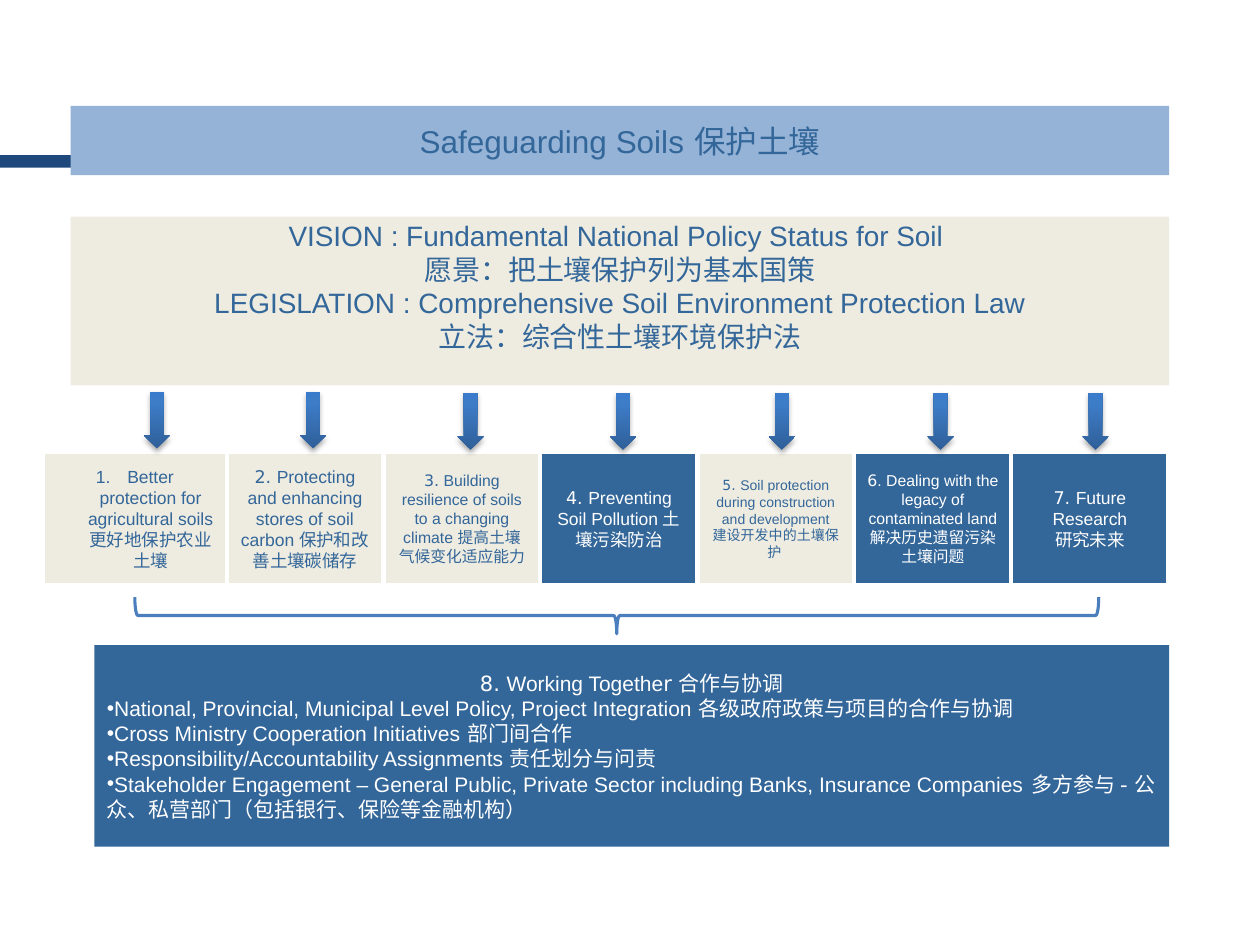
from copy import deepcopy
from dataclasses import dataclass

from lxml import etree
from pptx import Presentation
from pptx.dml.color import RGBColor
from pptx.enum.shapes import MSO_CONNECTOR, MSO_SHAPE
from pptx.enum.text import MSO_ANCHOR, PP_ALIGN
from pptx.oxml.ns import qn
from pptx.util import Inches, Pt

RECT, ARROW, BRACE = MSO_SHAPE.RECTANGLE, MSO_SHAPE.DOWN_ARROW, MSO_SHAPE.LEFT_BRACE
CENTER, LEFT, MIDDLE = PP_ALIGN.CENTER, PP_ALIGN.LEFT, MSO_ANCHOR.MIDDLE
STRAIGHT = MSO_CONNECTOR.STRAIGHT
FONTS = ("DejaVu Sans", "Arial")
NAVY, BLUE, SKY, CREAM, WHITE = "1F497D", "336699", "95B3D7", "EEECE1", "FFFFFF"
ARROW_STOPS = ((0, "2F5F99"), (0.8, "3D7CC7"), (1, "3A7CCB"))
CARD_TOP, CARD_HEIGHT, CARD_WIDTH, CARD_STEP = 3.59, 1.05, 1.24, 1.246
FIRST_LEFT, FIRST_WIDTH, SECOND_LEFT = 0.34, 1.46, 1.8


@dataclass
class Card:
    lines: list[str]
    size: int
    arrow_left: float
    arrow_top: float = 3.12
    dark: bool = False


CARDS = [
    Card(["|Better protection for agricultural soils |更好地保护农业土壤"], 10, 1.14, 3.11),
    Card(["2. |Protecting and enhancing stores of soil carbon |保护和改善土壤碳储存"], 10, 2.38, 3.11),
    Card(["3.| Building resilience of soils to a changing climate |提高土壤气候变化适应能力"], 9, 3.63),
    Card(["4. |Preventing Soil Pollution |土壤污染防治"], 10, 4.84, dark=True),
    Card(["5. |Soil protection during construction and development", "建设开发中的土壤保护 "], 8, 6.1),
    Card(["6|. Dealing with the legacy of contaminated land |解决历史遗留污染土壤问题"], 9, 7.36, dark=True),
    Card(["7. |Future Research", "研究未来"], 10, 8.59, dark=True),
]
VISION = [
    "|VISION : Fundamental National Policy Status for Soil ",
    "愿景：把土壤保护列为基本国策",
    "|LEGISLATION : Comprehensive Soil Environment Protection Law",
    "立法：综合性土壤环境保护法",
]
TOGETHER = [
    "8. |Working Togethe|r 合作与协调",
    "|National, Provincial, Municipal Level Policy, Project Integration |各级政府政策与项目的合作与协调",
    "|Cross Ministry Cooperation Initiatives| 部门间合作",
    "|Responsibility/Accountability Assignments 责任划分与问责",
    "|Stakeholder Engagement – General Public, Private Sector including Banks, "
    "Insurance Companies| 多方参与 - 公众、私营部门（包括银行、保险等金融机构）",
]


def rgb(value: str) -> RGBColor:
    return RGBColor.from_string(value)


def add_shape(s, kind, left: float, top: float, width: float, height: float):
    sp = s.shapes.add_shape(kind, Inches(left), Inches(top), Inches(width), Inches(height))
    sp.shadow.inherit = False
    sp.line.fill.background()
    return sp


def add_box(s, left: float, top: float, width: float, height: float, fill: str, border: float = 0):
    sp = add_shape(s, RECT, left, top, width, height)
    sp.fill.solid()
    sp.fill.fore_color.rgb = rgb(fill)
    if border:
        sp.line.color.rgb = rgb(WHITE)
        sp.line.width = Pt(border)
    return sp


def write(sp, lines: list[str], size: int, color: str) -> None:
    tf = sp.text_frame
    tf.word_wrap = True
    tf.vertical_anchor = MIDDLE
    for i, line in enumerate(lines):
        p = tf.paragraphs[0] if i == 0 else tf.add_paragraph()
        p.alignment = CENTER
        for j, part in enumerate(line.split("|")):
            if part:
                r = p.add_run()
                r.text = part
                r.font.name = FONTS[j % 2]
                r.font.size = Pt(size)
                r.font.color.rgb = rgb(color)


def add_bullet(p, tag: str, **attributes: str) -> None:
    etree.SubElement(p._p.get_or_add_pPr(), qn(tag), attributes)


def add_arrow(s, left: float, top: float) -> None:
    sp = add_shape(s, ARROW, left, top, 0.21, 0.45)
    sp.fill.gradient()
    sp.fill.gradient_angle = 90
    stops = sp._element.spPr.find(".//" + qn("a:gsLst"))
    stops.append(deepcopy(stops[-1]))
    for stop, (position, color) in zip(sp.fill.gradient_stops, ARROW_STOPS):
        stop.position = position
        stop.color.rgb = rgb(color)
    effects = sp._element.spPr.find(qn("a:effectLst"))
    shadow = etree.SubElement(effects, qn("a:outerShdw"), blurRad=str(Pt(3.1)),
                              dist=str(Pt(1.8)), dir="5400000", rotWithShape="0")
    black = etree.SubElement(shadow, qn("a:srgbClr"), val="000000")
    etree.SubElement(black, qn("a:alpha"), val="35000")


def add_rule(s) -> None:
    line = s.shapes.add_connector(STRAIGHT, 0, Inches(1.24), Inches(8.54), Inches(1.24))
    line.line.color.rgb = rgb(NAVY)
    line.line.width = Pt(1.5)
    etree.SubElement(line._element.spPr, qn("a:effectLst"))
    add_box(s, 0, 1.25, 2.76, 0.08, NAVY)


def add_cards(s) -> None:
    for i, card in enumerate(CARDS):
        left = SECOND_LEFT + (i - 1) * CARD_STEP if i else FIRST_LEFT
        width = CARD_WIDTH if i else FIRST_WIDTH
        fill, color, border = (BLUE, WHITE, 1.75) if card.dark else (CREAM, BLUE, 2)
        sp = add_box(s, left, CARD_TOP, width, CARD_HEIGHT, fill, border)
        write(sp, card.lines, card.size, color)
        if i == 0:
            p = sp.text_frame.paragraphs[0]
            pPr = p._p.get_or_add_pPr()
            pPr.set("marL", str(Inches(0.25)))
            pPr.set("indent", str(Inches(-0.25)))
            add_bullet(p, "a:buAutoNum", type="arabicPeriod")


def main() -> None:
    prs = Presentation()
    prs.slide_width, prs.slide_height = Inches(10), Inches(7.5)
    s = prs.slides.add_slide(prs.slide_layouts[6])

    add_rule(s)
    write(add_box(s, 0.56, 0.84, 8.72, 0.55, SKY), ["|Safeguarding Soils| 保护土壤"], 18, BLUE)
    vision = add_box(s, 0.56, 1.72, 8.72, 1.34, CREAM)
    write(vision, VISION, 16, BLUE)
    vision.text_frame.margin_bottom = Inches(0.29)
    add_cards(s)

    together = add_box(s, 0.75, 5.12, 8.53, 1.6, BLUE)
    write(together, TOGETHER, 12, WHITE)
    for p in together.text_frame.paragraphs[1:]:
        p.alignment = LEFT
        add_bullet(p, "a:buFont", typeface="Arial")
        add_bullet(p, "a:buChar", char="•")

    for card in CARDS:
        add_arrow(s, card.arrow_left, card.arrow_top)

    brace = add_shape(s, BRACE, 4.75, 1.06, 0.29, 7.65)
    brace.rotation = 270
    brace.fill.background()
    brace.line.color.rgb = rgb("4B7EBC")
    brace.line.width = Pt(1.75)
    prs.save("out.pptx")


if __name__ == "__main__":
    main()
